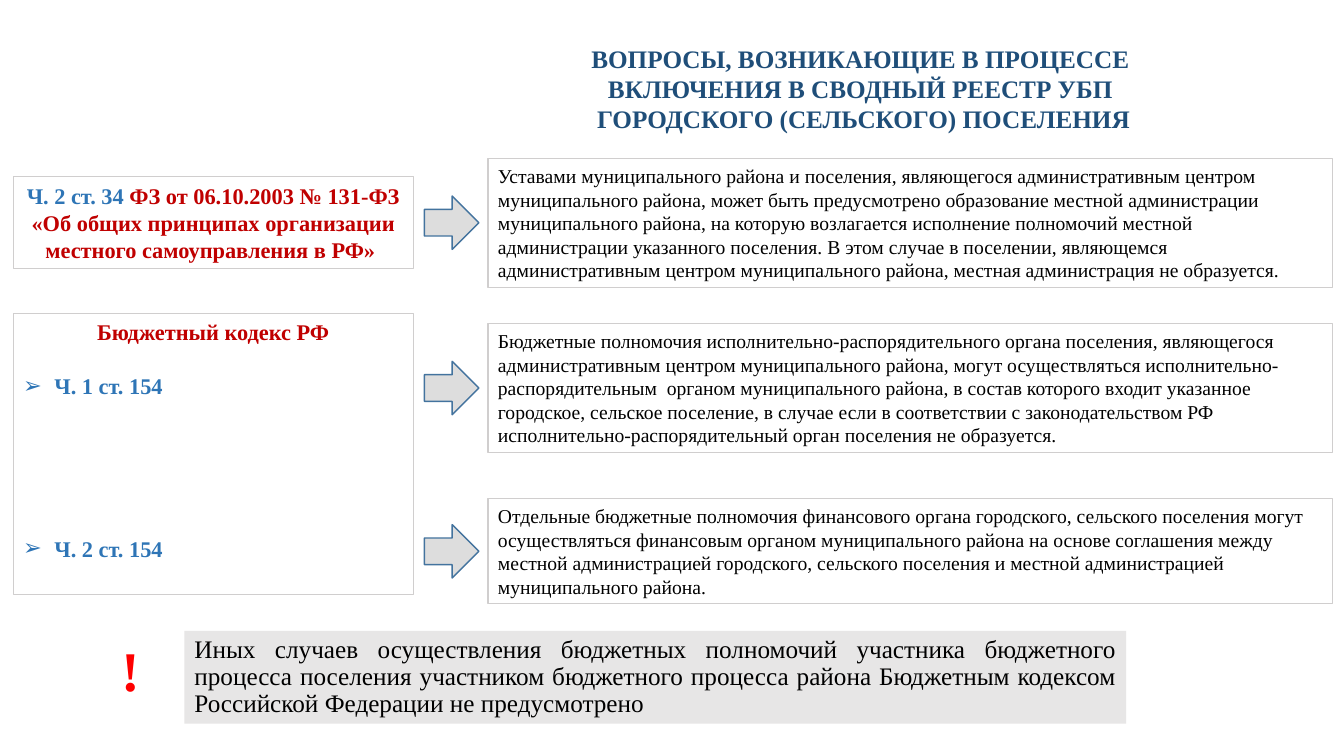
from lxml.etree import SubElement
from pptx import Presentation
from pptx.dml.color import RGBColor
from pptx.enum.shapes import MSO_SHAPE
from pptx.enum.text import MSO_ANCHOR, MSO_AUTO_SIZE, PP_ALIGN
from pptx.oxml.ns import qn
from pptx.util import Inches, Pt

# Content
TITLE = [
    "ВОПРОСЫ, ВОЗНИКАЮЩИЕ В ПРОЦЕССЕ ",
    "ВКЛЮЧЕНИЯ В СВОДНЫЙ РЕЕСТР УБП ",
    "ГОРОДСКОГО (СЕЛЬСКОГО) ПОСЕЛЕНИЯ",
]
LAW = [
    ("Ч. 2 ст. 34 ", "2E75B6"),
    ("ФЗ от 06.10.2003 № 131-ФЗ «Об общих принципах организации "
     "местного самоуправления в РФ» ", "C00000"),
]
CODE_HEADING = "Бюджетный кодекс РФ"
CODE_ARTICLES = [("Ч. 1 ст. 154", 19), ("Ч. 2 ст. 154", 97)]  # text, points before
# Provision text, top and height of its box
PROVISIONS = [
    ("Уставами муниципального района и поселения, являющегося административным "
     "центром муниципального района, может быть предусмотрено образование местной "
     "администрации муниципального района, на которую возлагается исполнение "
     "полномочий местной администрации указанного поселения. В этом случае в "
     "поселении, являющемся административным центром муниципального района, "
     "местная администрация не образуется.", 1.57, 1.28),
    ("Бюджетные полномочия исполнительно-распорядительного органа поселения, "
     "являющегося административным центром муниципального района, могут "
     "осуществляться исполнительно-распорядительным  органом муниципального района, "
     "в состав которого входит указанное городское, сельское поселение, в случае "
     "если в соответствии с законодательством РФ исполнительно-распорядительный "
     "орган поселения не образуется.", 3.21, 1.28),
    ("Отдельные бюджетные полномочия финансового органа городского, сельского "
     "поселения могут осуществляться финансовым органом муниципального района на "
     "основе соглашения между местной администрацией городского, сельского "
     "поселения и местной администрацией муниципального района.", 4.95, 1.04),
]
WARNING = ("Иных случаев осуществления бюджетных полномочий участника бюджетного "
           "процесса поселения участником бюджетного процесса района Бюджетным "
           "кодексом Российской Федерации не предусмотрено")

# Columns: left and width
SOURCES = (0.13, 3.97)
ARROWS = (4.21, 0.54)
TEXTS = (4.84, 8.38)
ARROW_HEIGHT = 0.53
BORDER = "D0CECE"


def color(value):
    return RGBColor.from_string(value)


def style(para, size, ink=None, bold=False, align=PP_ALIGN.LEFT):
    para.alignment = align
    para.font.name = "Times New Roman"
    para.font.size = Pt(size)
    para.font.bold = bold
    if ink:
        para.font.color.rgb = color(ink)


def place(shape, left, top, width, height):
    shape.left, shape.top = Inches(left), Inches(top)
    shape.width, shape.height = Inches(width), Inches(height)


def set_frame(shape, anchor=MSO_ANCHOR.MIDDLE):
    frame = shape.text_frame
    frame.word_wrap = True
    frame.auto_size = MSO_AUTO_SIZE.NONE
    frame.vertical_anchor = anchor
    return frame


def outline(shape, ink, width=0.75):
    shape.line.color.rgb = color(ink)
    shape.line.width = Pt(width)


def add_box(kind, left, top, width, height, fill=None, border=None, weight=0.75):
    box = page.shapes.add_shape(
        kind, Inches(left), Inches(top), Inches(width), Inches(height))
    box.shadow.inherit = False
    if fill:
        box.fill.solid()
        box.fill.fore_color.rgb = color(fill)
    else:
        box.fill.background()
    if border:
        outline(box, border, weight)
    else:
        box.line.fill.background()
    return box


def set_bullet(para, char=None, indent=0):
    props = para._p.get_or_add_pPr()
    props.set("marL", str(Inches(indent)))
    props.set("indent", str(-Inches(indent)))
    if char:
        SubElement(props, qn("a:buChar")).set("char", char)
    else:
        SubElement(props, qn("a:buNone"))


deck = Presentation()
deck.slide_width, deck.slide_height = Inches(13.33), Inches(7.5)
page = deck.slides.add_slide(deck.slide_layouts[1])

# Title
title = page.shapes.title
place(title, 4.59, 0.37, 7.95, 1.01)
frame = set_frame(title)
frame.text = "\n".join(TITLE)
for para in frame.paragraphs:
    style(para, 18, "1F4E79", True, PP_ALIGN.CENTER)

# Federal law
box = add_box(MSO_SHAPE.RECTANGLE, SOURCES[0], 1.75, SOURCES[1], 0.91, border=BORDER)
para = set_frame(box).paragraphs[0]
style(para, 16, bold=True, align=PP_ALIGN.CENTER)
for text, ink in LAW:
    span = para.add_run()
    span.text = text
    span.font.color.rgb = color(ink)

# Budget code and its articles
body = page.placeholders[1]
place(body, SOURCES[0], 3.11, SOURCES[1], 2.79)
outline(body, BORDER)
frame = set_frame(body, MSO_ANCHOR.TOP)
heading = frame.paragraphs[0]
heading.text = CODE_HEADING
set_bullet(heading)
heading.space_before = Pt(0)
style(heading, 16, "C00000", True, PP_ALIGN.CENTER)
for text, gap in CODE_ARTICLES:
    para = frame.add_paragraph()
    para.text = text
    set_bullet(para, "➢", 0.31)
    para.space_before = Pt(gap)
    style(para, 16, "2E75B6", True)

# Provisions, each with an arrow at mid-height
for text, top, height in PROVISIONS:
    box = add_box(MSO_SHAPE.RECTANGLE, TEXTS[0], top, TEXTS[1], height, border=BORDER)
    para = set_frame(box).paragraphs[0]
    para.text = text
    style(para, 14, "000000")
    add_box(MSO_SHAPE.RIGHT_ARROW, ARROWS[0], top + (height - ARROW_HEIGHT) / 2,
            ARROWS[1], ARROW_HEIGHT, "DDDDDD", "43739E", 1)

# Warning
box = add_box(MSO_SHAPE.RECTANGLE, 1.83, 6.26, 9.34, 0.92, fill="E7E6E6")
para = set_frame(box).paragraphs[0]
para.text = WARNING
para.line_spacing = 0.9
style(para, 18, "000000", align=PP_ALIGN.JUSTIFY)

mark = page.shapes.add_textbox(Inches(1.02), Inches(6.26), Inches(0.55), Inches(0.79))
para = set_frame(mark, MSO_ANCHOR.TOP).paragraphs[0]
para.text = "!"
style(para, 40, "FF0000", True, PP_ALIGN.CENTER)

deck.save("out.pptx")
